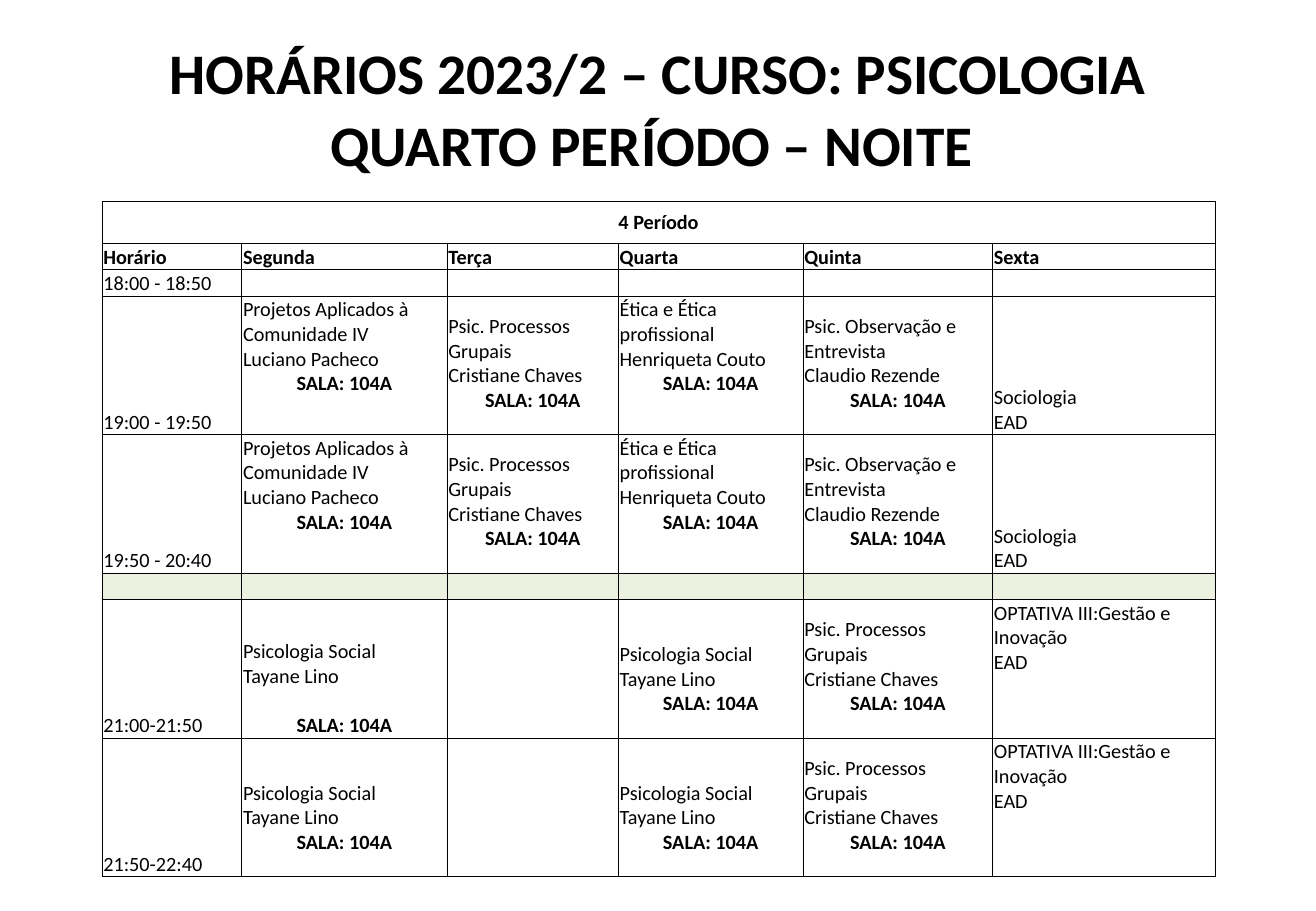
from lxml import etree
from pptx import Presentation
from pptx import util as u
from pptx.dml.color import RGBColor
from pptx.enum import text
from pptx.oxml import ns

PX = 9144  # 100 px to the inch
FONT = "Calibri"
BLACK, WHITE, BREAK_GREEN = "000000", "FFFFFF", "EBF1DE"
TOP, BOTTOM = text.MSO_ANCHOR.TOP, text.MSO_ANCHOR.BOTTOM
CENTER = text.PP_ALIGN.CENTER
ROOM = "SALA: 104A"

COLUMNS = [115, 169, 141, 152, 156, 183]
ROWS = [31, 22, 22, 114, 114, 22, 114, 114]
BREAK_ROW = 5
DAYS = ["Horário", "Segunda", "Terça", "Quarta", "Quinta", "Sexta"]

# Lessons: words, anchor, has a room, bottom margin in px
PROJECTS = ("Projetos Aplicados à Comunidade IV\nLuciano Pacheco", TOP, True, 0)
GROUPS = ("Psic. Processos Grupais\nCristiane Chaves", BOTTOM, True, 18)
ETHICS = ("Ética e Ética profissional\nHenriqueta Couto", TOP, True, 0)
INTERVIEW = ("Psic. Observação e Entrevista\nClaudio Rezende", BOTTOM, True, 18)
SOCIOLOGY = ("Sociologia\nEAD", BOTTOM, False, 0)
SOCIAL = ("Psicologia Social\nTayane Lino", BOTTOM, True, 18)
SOCIAL_LOW = SOCIAL[:3] + (0,)
OPTIONAL = ("OPTATIVA III:Gestão e Inovação\nEAD", TOP, False, 0)

EARLY = [PROJECTS, GROUPS, ETHICS, INTERVIEW, SOCIOLOGY]
LATE = [SOCIAL, None, SOCIAL, GROUPS, OPTIONAL]
SCHEDULE = {
    2: ("18:00 - 18:50", [None] * 5),
    3: ("19:00 - 19:50", EARLY),
    4: ("19:50 - 20:40", EARLY),
    6: ("21:00-21:50", [SOCIAL_LOW] + LATE[1:]),
    7: ("21:50-22:40", LATE),
}


def px(length):
    return u.Emu(length * PX)


def color(value):
    return RGBColor.from_string(value)


def write(para, words, size=12, bold=False, align=None):
    para.text = words
    para.alignment = align
    para.font.name = FONT
    para.font.size = u.Pt(size)
    para.font.bold = bold
    para.font.color.rgb = color(BLACK)


def add_title(page, lines):
    box = page.shapes.add_textbox(px(54), px(30), px(975), px(125))
    frame = box.text_frame
    frame.word_wrap = True
    frame.vertical_anchor = text.MSO_ANCHOR.MIDDLE
    for number, line in enumerate(lines):
        para = frame.add_paragraph() if number else frame.paragraphs[0]
        write(para, line, 34, True, CENTER)
        para.line_spacing = 0.9
        para.space_after = u.Pt(6)


def style_cell(cell, fill):
    """Thin black borders, a plain fill and tight margins."""
    properties = cell._tc.get_or_add_tcPr()
    for side in ("a:lnL", "a:lnR", "a:lnT", "a:lnB"):
        line = etree.SubElement(properties, ns.qn(side), w="6350")
        paint = etree.SubElement(line, ns.qn("a:solidFill"))
        etree.SubElement(paint, ns.qn("a:srgbClr"), val=BLACK)
    cell.fill.solid()
    cell.fill.fore_color.rgb = color(fill)
    cell.margin_left = cell.margin_right = cell.margin_top = px(1)
    cell.margin_bottom = 0
    cell.vertical_anchor = BOTTOM


def fill_empty(cell):
    """Keep an empty cell as low as a 12 pt line."""
    para = cell.text_frame.paragraphs[0]
    etree.SubElement(para._p, ns.qn("a:endParaRPr"), sz="1200")


def write_cell(cell, words, bold=False):
    write(cell.text_frame.paragraphs[0], words, bold=bold)


def write_lesson(cell, lesson):
    words, anchor, has_room, bottom = lesson
    cell.vertical_anchor = anchor
    cell.margin_bottom = px(bottom)
    write_cell(cell, words)
    if has_room:
        para = cell.text_frame.add_paragraph()
        write(para, ROOM, bold=True, align=CENTER)
        if lesson is SOCIAL_LOW:
            para.space_before = u.Pt(14.6)


def add_timetable(page):
    frame = page.shapes.add_table(len(ROWS), len(COLUMNS), px(84), px(166),
                                  px(sum(COLUMNS)), px(sum(ROWS)))
    table = frame.table
    table.first_row = table.horz_banding = False
    for column, width in zip(table.columns, COLUMNS):
        column.width = px(width)
    for number, height in enumerate(ROWS):
        table.rows[number].height = px(height)
        for cell in table.rows[number].cells:
            style_cell(cell, BREAK_GREEN if number == BREAK_ROW else WHITE)

    # Heading across all columns
    heading = table.cell(0, 0)
    heading.merge(table.cell(0, len(COLUMNS) - 1))
    heading.vertical_anchor = TOP
    heading.margin_left = heading.margin_right = px(14)
    heading.margin_top = heading.margin_bottom = px(7)
    write(heading.text_frame.paragraphs[0], "4 Período", bold=True, align=CENTER)

    # Days, hours and lessons
    for column, day in enumerate(DAYS):
        write_cell(table.cell(1, column), day, True)
        fill_empty(table.cell(BREAK_ROW, column))
    for row, (hours, lessons) in SCHEDULE.items():
        write_cell(table.cell(row, 0), hours)
        for column, lesson in enumerate(lessons, 1):
            if lesson:
                write_lesson(table.cell(row, column), lesson)
            else:
                fill_empty(table.cell(row, column))


def main():
    deck = Presentation()
    deck.slide_width, deck.slide_height = px(1083), px(750)
    page = deck.slides.add_slide(deck.slide_layouts[6])
    add_title(page, ["HORÁRIOS 2023/2 – CURSO: PSICOLOGIA", "QUARTO PERÍODO – NOITE "])
    add_timetable(page)
    deck.save("out.pptx")


if __name__ == "__main__":
    main()
